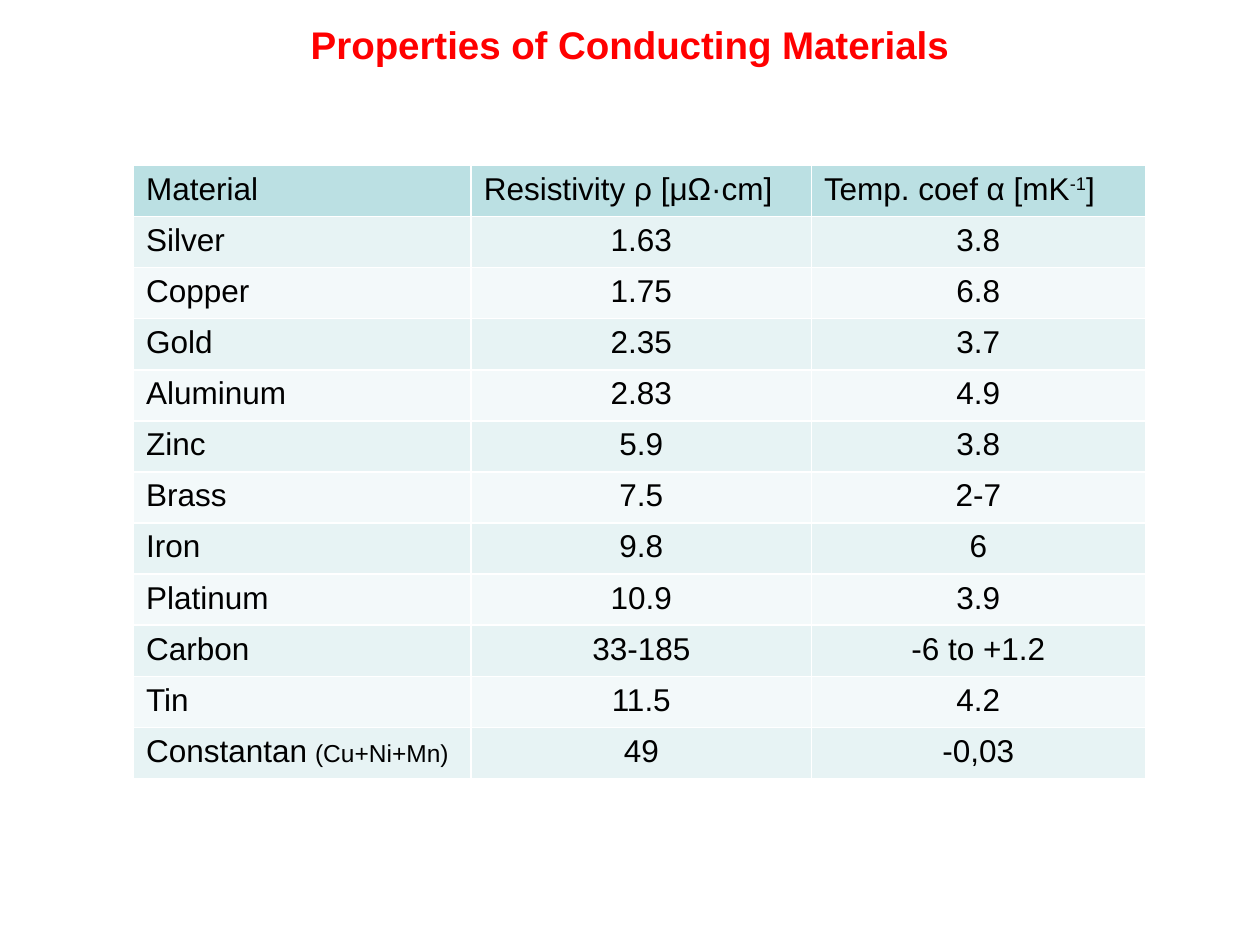
from pptx import Presentation
from pptx.dml.color import RGBColor
from pptx.enum.text import MSO_ANCHOR, PP_ALIGN
from pptx.util import Inches, Pt

CENTER, LEFT = PP_ALIGN.CENTER, PP_ALIGN.LEFT
MIDDLE = MSO_ANCHOR.MIDDLE

COLORS = {
    "title": "FF0000",
    "text": "000000",
    "header": "BBE0E3",
    "odd_row": "E7F3F4",
    "even_row": "F3F9FA",
}

HEADINGS = ["Material", "Resistivity ρ [μΩ·cm]", "Temp. coef α [mK-1]"]
MATERIALS = [
    ("Silver", "1.63", "3.8"),
    ("Copper", "1.75", "6.8"),
    ("Gold", "2.35", "3.7"),
    ("Aluminum", "2.83", "4.9"),
    ("Zinc", "5.9", "3.8"),
    ("Brass", "7.5", "2-7"),
    ("Iron", "9.8", "6"),
    ("Platinum", "10.9", "3.9"),
    ("Carbon", "33-185", "-6 to +1.2"),
    ("Tin", "11.5", "4.2"),
    ("Constantan (Cu+Ni+Mn)", "49", "-0,03"),
]
# Cells whose text is split into runs: (text, size, baseline in thousandths of a percent)
MIXED_RUNS = {
    "Temp. coef α [mK-1]": [
        ("Temp. coef α [mK", 18, 0), ("-1", 18, 30000), ("]", 18, 0)],
    "Constantan (Cu+Ni+Mn)": [
        ("Constantan", 18, 0), (" ", 16, 0), ("(Cu+Ni+Mn)", 14, 0)],
}


class SlideBuilder:
    """Holds the style and the current slide; places are shares of the slide's size."""

    font_name = "Arial"
    title_size = 22
    body_size = 18

    def __init__(self, presentation):
        self.width = presentation.slide_width
        self.height = presentation.slide_height
        self.slide = presentation.slides.add_slide(presentation.slide_layouts[6])

    def place(self, left, top, width, height):
        """Turn shares of the slide into lengths."""
        return (round(left * self.width), round(top * self.height),
                round(width * self.width), round(height * self.height))

    def style_run(self, run, size, color, bold=False):
        run.font.name = self.font_name
        run.font.size = Pt(size)
        run.font.bold = bold
        run.font.color.rgb = RGBColor.from_string(COLORS[color])

    def title(self, text, *shares):
        frame = self.slide.shapes.add_textbox(*self.place(*shares)).text_frame
        frame.word_wrap = True
        frame.vertical_anchor = MIDDLE
        frame.text = text
        heading = frame.paragraphs[0]
        heading.alignment = CENTER
        self.style_run(heading.runs[0], self.title_size, "title", bold=True)

    def table(self, rows, column_shares, *shares):
        table = self.slide.shapes.add_table(
            len(rows), len(column_shares), *self.place(*shares)).table
        for column, share in zip(table.columns, column_shares):
            column.width = round(share * self.width)
        for row, texts in enumerate(rows):
            fill = "header" if row == 0 else "odd_row" if row % 2 else "even_row"
            for column, text in enumerate(texts):
                alignment = CENTER if row and column else LEFT
                self.cell(table.cell(row, column), text, fill, alignment)

    def cell(self, cell, text, fill, alignment):
        cell.fill.solid()
        cell.fill.fore_color.rgb = RGBColor.from_string(COLORS[fill])
        paragraph = cell.text_frame.paragraphs[0]
        paragraph.alignment = alignment
        for part, size, baseline in MIXED_RUNS.get(text, [(text, self.body_size, 0)]):
            run = paragraph.add_run()
            run.text = part
            self.style_run(run, size, "text")
            if baseline:
                run.font._element.set("baseline", str(baseline))


def main():
    presentation = Presentation()
    presentation.slide_width, presentation.slide_height = Inches(10), Inches(7.5)
    builder = SlideBuilder(presentation)
    builder.title("Properties of Conducting Materials", 0.075, -0.008, 0.85, 0.11)
    builder.table([HEADINGS, *MATERIALS], [0.268, 0.27, 0.265],
                  0.106, 0.175, 0.803, 0.649)
    presentation.save("out.pptx")


if __name__ == "__main__":
    main()
